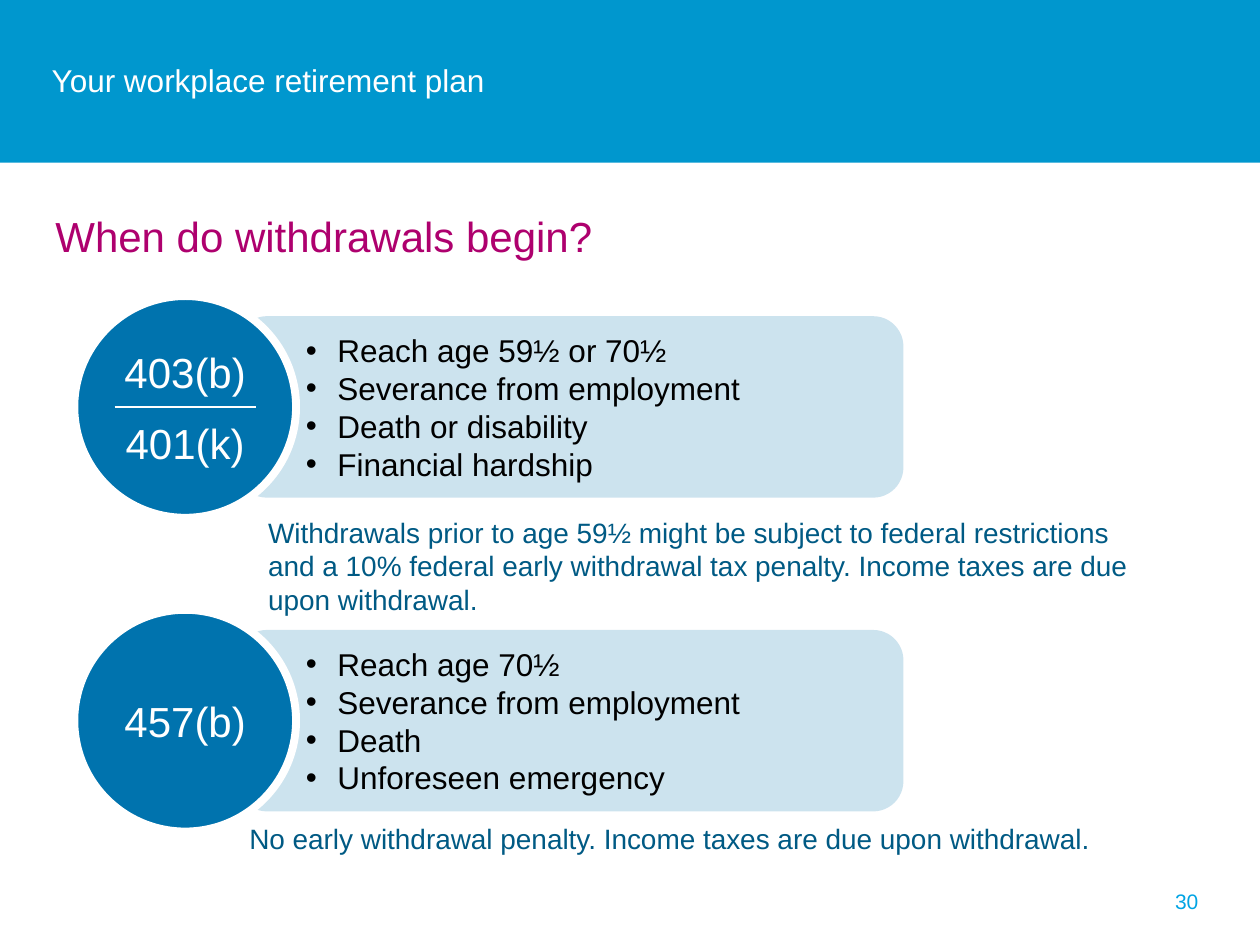
from dataclasses import dataclass

from lxml.etree import SubElement
from pptx import Presentation
from pptx.dml.color import RGBColor
from pptx.enum.shapes import MSO_CONNECTOR as Connector, MSO_SHAPE as Shape
from pptx.enum.text import MSO_ANCHOR as Anchor, PP_ALIGN as Align
from pptx.oxml.ns import qn
from pptx.util import Inches, Pt


@dataclass(frozen=True)
class Theme:
    font: str = "Arial"
    banner: str = "0097CE"
    circle: str = "0073AE"
    white: str = "FFFFFF"
    heading: str = "AE006E"
    note: str = "005A84"
    number: str = "00A4E4"
    black: str = "000000"
    title_size: int = 18
    heading_size: int = 24
    plan_size: int = 24
    reason_size: int = 18
    note_size: int = 16
    number_size: int = 12
    panel_alpha: int = 20000


THEME = Theme()

TITLE = "Your workplace retirement plan"
HEADING = "When do withdrawals begin?"
PAGE_NUMBER = "30"
PLANS = [
    {
        "names": ["403(b)", "401(k)"],
        "reasons": ["Reach age 59½ or 70½", "Severance from employment",
                    "Death or disability", "Financial hardship"],
        "note": "Withdrawals prior to age 59½ might be subject to federal restrictions "
                "and a 10% federal early withdrawal tax penalty. Income taxes are due "
                "upon withdrawal.",
        "note_box": (2.03, 4.04, 7.27, 0.91),
    },
    {
        "names": ["457(b)"],
        "reasons": ["Reach age 70½", "Severance from employment",
                    "Death", "Unforeseen emergency"],
        "note": "No early withdrawal penalty. Income taxes are due upon withdrawal.",
        "note_box": (1.88, 6.47, 7.42, 0.37),
    },
]

CIRCLE_LEFT, CIRCLE_TOP, DIAMETER = 0.59, 2.35, 1.76
PANEL_LEFT, PANEL_WIDTH, PANEL_HEIGHT = 1.88, 5.29, 1.44
PLAN_STEP = 2.49
DIVIDER_WIDTH = 1.12


def inches(box):
    return [Inches(value) for value in box]


def set_attributes(target, values):
    for name, value in values.items():
        setattr(target, name, value)


def add_bullet(paragraph):
    properties = paragraph._p.get_or_add_pPr()
    properties.set("marL", str(Inches(0.63)))
    properties.set("indent", str(Inches(-0.25)))
    SubElement(properties, qn("a:buFont")).set("typeface", THEME.font)
    SubElement(properties, qn("a:buChar")).set("char", "•")


def write_text(shape, lines, size, color, align=Align.LEFT, anchor=Anchor.TOP,
               bullets=False, gap=0, **frame_format):
    frame = shape.text_frame
    set_attributes(frame, {"word_wrap": True, "vertical_anchor": anchor, **frame_format})
    for index, line in enumerate(lines):
        paragraph = frame.paragraphs[0] if index == 0 else frame.add_paragraph()
        paragraph.alignment = align
        if index and gap:
            paragraph.space_before = Pt(gap)
        if bullets:
            add_bullet(paragraph)
        run = paragraph.add_run()
        run.text = line
        set_attributes(run.font, {"name": THEME.font, "size": Pt(size)})
        run.font.color.rgb = RGBColor.from_string(color)


def add_text(slide, box, text, size, color, **options):
    write_text(slide.shapes.add_textbox(*inches(box)), [text], size, color, **options)


def add_filled(slide, kind, box, color, border=0):
    shape = slide.shapes.add_shape(kind, *inches(box))
    shape.shadow.inherit = False
    shape.fill.solid()
    shape.fill.fore_color.rgb = RGBColor.from_string(color)
    if border:
        shape.line.color.rgb = RGBColor.from_string(THEME.white)
        shape.line.width = Pt(border)
    else:
        shape.line.fill.background()
    return shape


def add_divider(slide, center_x, y):
    half = DIVIDER_WIDTH / 2
    line = slide.shapes.add_connector(
        Connector.STRAIGHT, *inches((center_x - half, y, center_x + half, y)))
    line.line.color.rgb = RGBColor.from_string(THEME.white)
    line.line.width = Pt(0.75)
    SubElement(line._element.spPr, qn("a:effectLst"))


def add_plan(slide, plan, top):
    center_x, center_y = CIRCLE_LEFT + DIAMETER / 2, top + DIAMETER / 2
    panel_box = (PANEL_LEFT, center_y - PANEL_HEIGHT / 2, PANEL_WIDTH, PANEL_HEIGHT)
    panel = add_filled(slide, Shape.ROUNDED_RECTANGLE, panel_box, THEME.circle)
    fill_color = panel._element.spPr.find(qn("a:solidFill"))[0]
    SubElement(fill_color, qn("a:alpha")).set("val", str(THEME.panel_alpha))
    write_text(panel, plan["reasons"], THEME.reason_size, THEME.black,
               anchor=Anchor.MIDDLE, bullets=True)

    circle = add_filled(slide, Shape.OVAL, (CIRCLE_LEFT, top, DIAMETER, DIAMETER),
                        THEME.circle, border=4.5)
    write_text(circle, plan["names"], THEME.plan_size, THEME.white,
               align=Align.CENTER, anchor=Anchor.MIDDLE, gap=12)
    if len(plan["names"]) > 1:
        add_divider(slide, center_x, center_y)


def main():
    presentation = Presentation()
    set_attributes(presentation, {"slide_width": Inches(10), "slide_height": Inches(7.5)})
    slide = presentation.slides.add_slide(presentation.slide_layouts[6])

    add_filled(slide, Shape.RECTANGLE, (0, 0, 10, 1.29), THEME.banner)
    add_text(slide, (0.41, 0.39, 9.21, 0.49), TITLE, THEME.title_size, THEME.white,
             anchor=Anchor.MIDDLE, margin_left=0)
    add_text(slide, (0.44, 1.62, 9.16, 0.6), HEADING, THEME.heading_size, THEME.heading,
             margin_left=0)
    for index, plan in enumerate(PLANS):
        add_text(slide, plan["note_box"], plan["note"], THEME.note_size, THEME.note)
        add_plan(slide, plan, CIRCLE_TOP + index * PLAN_STEP)
    add_text(slide, (7.28, 6.95, 2.33, 0.4), PAGE_NUMBER, THEME.number_size, THEME.number,
             align=Align.RIGHT, anchor=Anchor.MIDDLE)

    presentation.save("out.pptx")


if __name__ == "__main__":
    main()
